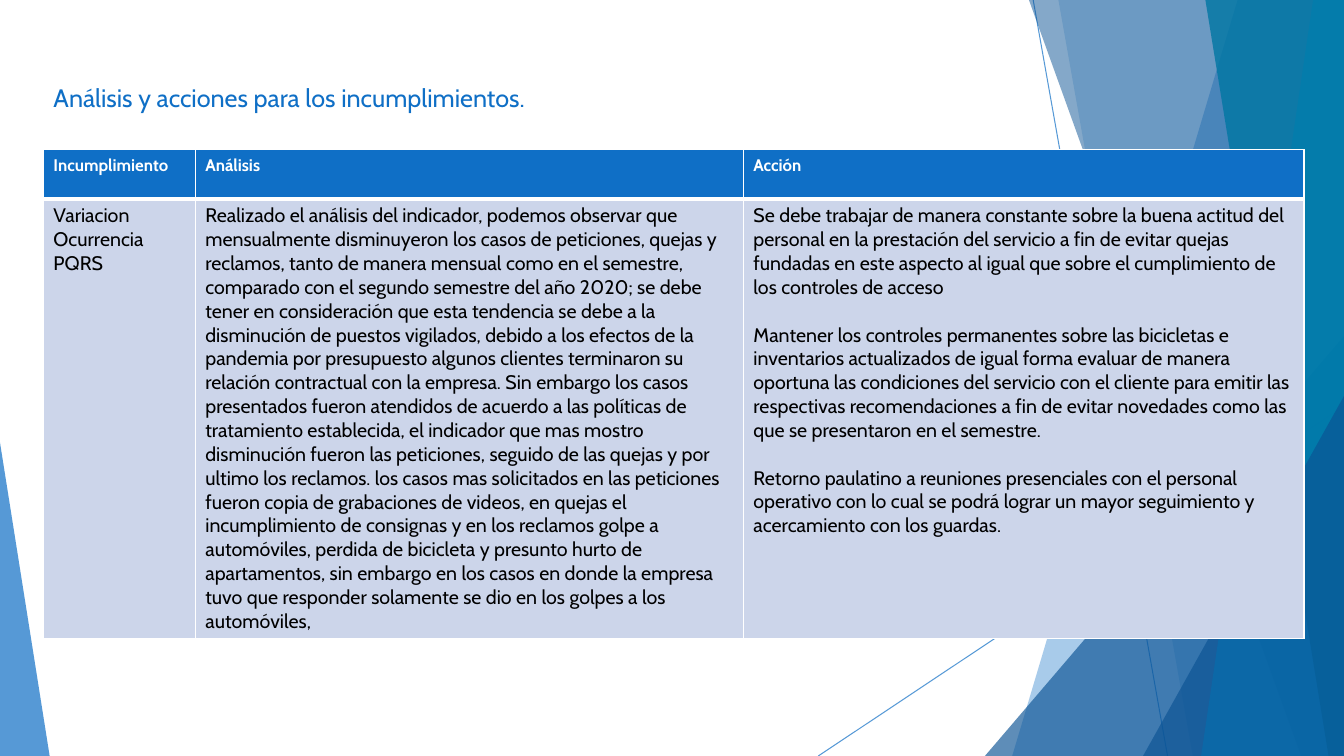
from dataclasses import dataclass

from pptx import Presentation
from pptx.dml.color import RGBColor
from pptx.enum.shapes import MSO_CONNECTOR, MSO_SHAPE
from pptx.enum.text import MSO_ANCHOR, PP_ALIGN
from pptx.oxml.ns import qn
from pptx.oxml.xmlchemy import OxmlElement
from pptx.util import Pt

LINE = MSO_CONNECTOR.STRAIGHT
WEDGE = MSO_SHAPE.ISOSCELES_TRIANGLE
TOP = MSO_ANCHOR.TOP
LEFT = PP_ALIGN.LEFT
WIDTH, HEIGHT = 960, 540


@dataclass(frozen=True)
class Theme:
    """Hold the colours, font and type sizes."""
    font: str = "Cabin"
    blue: str = "0F6FC6"
    navy: str = "0B5394"
    cyan: str = "009DD9"
    teal: str = "0076A3"
    pale: str = "CCD5EA"
    white: str = "FFFFFF"
    black: str = "000000"
    title: int = 18
    head: int = 12
    body: int = 14


THEME = Theme()
HEADS = ["Incumplimiento", "Análisis", "Acción"]
STUDY = [
    "Realizado el análisis del indicador, podemos observar que mensualmente "
    "disminuyeron los casos de peticiones, quejas y reclamos, tanto de manera "
    "mensual como en el semestre, comparado con el segundo semestre del año 2020; "
    "se debe tener en consideración que esta tendencia se debe a la disminución de "
    "puestos vigilados, debido a los efectos de la pandemia por presupuesto algunos "
    "clientes terminaron su relación contractual con la empresa.",
    "Sin embargo los casos presentados fueron atendidos de acuerdo a las políticas "
    "de tratamiento establecida, el indicador que mas mostro disminución fueron las "
    "peticiones, seguido de las quejas y por ultimo los reclamos.",
    "los casos mas solicitados en las peticiones fueron copia de grabaciones de "
    "videos, en quejas el incumplimiento de consignas y en los reclamos golpe a "
    "automóviles, perdida de bicicleta y presunto hurto de apartamentos, sin embargo "
    "en los casos en donde la empresa tuvo que responder solamente se dio en los "
    "golpes a los automóviles,",
]
CELLS = [
    ["Variacion Ocurrencia PQRS"],
    [" ".join(STUDY)],
    ["Se debe trabajar de manera constante sobre la buena actitud del personal en la "
     "prestación del servicio a fin de evitar quejas fundadas en este aspecto al igual "
     "que sobre el cumplimiento de los controles de acceso",
     "Mantener los controles permanentes sobre las bicicletas e inventarios "
     "actualizados de igual forma evaluar de manera oportuna las condiciones del "
     "servicio con el cliente para emitir las respectivas recomendaciones a fin de "
     "evitar novedades como las que se presentaron en el semestre.",
     "Retorno paulatino a reuniones presenciales con el personal operativo con lo cual "
     "se podrá lograr un mayor seguimiento y acercamiento con los guardas."],
]


def write(frame, texts, size, color, bold=False, gap=0):
    """Write one formatted paragraph for each text."""
    frame.word_wrap = True
    for i, text in enumerate(texts):
        para = frame.paragraphs[0] if i == 0 else frame.add_paragraph()
        para.alignment = LEFT
        para.space_before = Pt(gap if i else 0)
        run = para.add_run()
        run.text = text
        run.font.name = THEME.font
        run.font.size = Pt(size)
        run.font.bold = bold
        run.font.color.rgb = RGBColor.from_string(color)


def fade(shape, alpha):
    """Set the opacity of a shape in percent."""
    for color in shape._element.iter(qn("a:srgbClr")):
        node = OxmlElement("a:alpha")
        node.set("val", str(alpha * 1000))
        color.append(node)


def edge(cell, tag, width):
    """Add one white border to a cell."""
    line = OxmlElement(tag)
    line.set("w", str(Pt(width)))
    fill = OxmlElement("a:solidFill")
    color = OxmlElement("a:srgbClr")
    color.set("val", THEME.white)
    fill.append(color)
    line.append(fill)
    cell._tc.get_or_add_tcPr().append(line)


class Deck:
    """Draw styled elements on the current slide."""

    def __init__(self, prs, theme):
        """Add a slide with a title."""
        self.theme = theme
        self.slide = prs.slides.add_slide(prs.slide_layouts[5])
        self.shapes = self.slide.shapes

    def paint(self, shape, color, alpha):
        """Give a shape a clear fill and no line."""
        shape.shadow.inherit = False
        shape.fill.solid()
        shape.fill.fore_color.rgb = RGBColor.from_string(color)
        shape.line.fill.background()
        fade(shape, alpha)

    def ray(self, x1, y1, x2, y2):
        """Draw a thin line."""
        line = self.shapes.add_connector(LINE, Pt(x1), Pt(y1), Pt(x2), Pt(y2))
        line.line.width = Pt(0.75)
        line.line.color.rgb = RGBColor.from_string(self.theme.blue)
        line._element.spPr.append(OxmlElement("a:effectLst"))
        fade(line, 70)

    def band(self, top, foot, color, alpha):
        """Draw a slanted band that reaches the right edge."""
        outline = self.shapes.build_freeform(Pt(top), 0)
        outline.add_line_segments(
            [(Pt(WIDTH), 0), (Pt(WIDTH), Pt(HEIGHT)), (Pt(foot), Pt(HEIGHT))])
        self.paint(outline.convert_to_shape(), color, alpha)

    def wedge(self, x, y, width, peak, color, alpha):
        """Draw a right triangle that stands on the foot of the slide."""
        shape = self.shapes.add_shape(
            WEDGE, Pt(x), Pt(y), Pt(width), Pt(HEIGHT - y))
        shape.adjustments[0] = peak
        self.paint(shape, color, alpha)

    def title(self, text, x, y, width, height):
        """Place and fill the title."""
        box = self.shapes.title
        box.left, box.top, box.width, box.height = map(Pt, (x, y, width, height))
        box.text_frame.vertical_anchor = TOP
        write(box.text_frame, [text], self.theme.title, self.theme.blue)
        tree = box._element.getparent()
        tree.append(box._element)

    def cell(self, cell, texts, fill, edges, **style):
        """Fill one table cell."""
        for tag, width in zip(("a:lnL", "a:lnR", "a:lnT", "a:lnB"), edges):
            edge(cell, tag, width)
        cell.fill.solid()
        cell.fill.fore_color.rgb = RGBColor.from_string(fill)
        write(cell.text_frame, texts, **style)

    def table(self, x, y, cols, rows):
        """Draw the table of findings."""
        look = self.theme
        grid = self.shapes.add_table(
            len(rows), len(cols), Pt(x), Pt(y), Pt(sum(cols)), Pt(sum(rows))).table
        grid.horz_banding = False
        for row, height in zip(grid.rows, rows):
            row.height = Pt(height)
        for i, width in enumerate(cols):
            grid.columns[i].width = Pt(width)
            self.cell(grid.cell(0, i), [HEADS[i]], look.blue, (1, 1, 1, 3),
                      size=look.head, color=look.white, bold=True)
            self.cell(grid.cell(1, i), CELLS[i], look.pale, (1, 1, 3, 1),
                      size=look.body, color=look.black, gap=17)


def main():
    """Build and save the slide."""
    prs = Presentation()
    prs.slide_width, prs.slide_height = Pt(WIDTH), Pt(HEIGHT)
    deck = Deck(prs, THEME)
    deck.ray(738, 0, 834, HEIGHT)
    deck.ray(WIDTH, 290, 584.5, HEIGHT)
    deck.band(884, 723, THEME.blue, 36)
    deck.band(756, 852, THEME.blue, 20)
    deck.wedge(703.5, 240, 256.5, 1, THEME.navy, 66)
    deck.band(735, 929.5, THEME.navy, 50)
    deck.band(938, 858, THEME.cyan, 70)
    deck.band(861, 949, THEME.teal, 80)
    deck.wedge(816.5, 283, 143.5, 1, THEME.navy, 66)
    deck.wedge(0, 316, 35.5, 0, THEME.blue, 70)
    deck.title("Análisis y acciones para los incumplimientos.", 31, 55.5, 708, 51)
    deck.table(31, 107, (108.5, 391.5, 400.5), (35, 313.5))
    prs.save("out.pptx")


if __name__ == "__main__":
    main()
